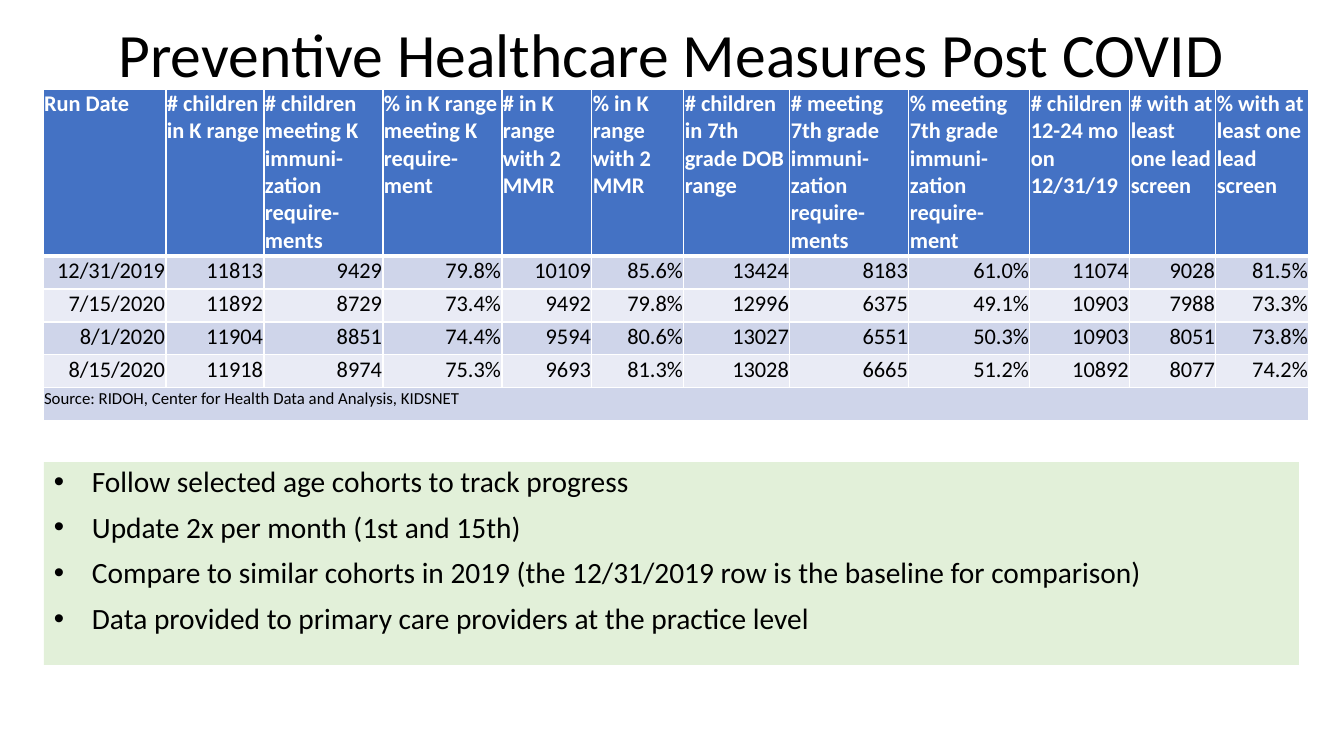
from dataclasses import dataclass

from lxml.etree import SubElement
from pptx import Presentation
from pptx.dml.color import RGBColor as Color
from pptx.enum.shapes import MSO_SHAPE as Preset
from pptx.enum.text import MSO_ANCHOR as Anchor, PP_ALIGN as Align
from pptx.oxml.ns import qn
from pptx.util import Pt

EMU_PER_PX = 914400 / 100.8


@dataclass(frozen=True)
class Theme:
    font: str = "Calibri"
    black: str = "000000"
    white: str = "FFFFFF"
    header_fill: str = "4472C4"
    bands: tuple = ("CFD5EA", "E9EBF5")
    panel_fill: str = "E2F0D9"
    title_size: int = 44
    panel_size: int = 21
    table_size: int = 16
    source_size: int = 12


THEME = Theme()

TITLE = "Preventive Healthcare Measures Post COVID"
COLUMNS = [
    ("Run Date", 123),
    ("# children in K range", 98),
    ("# children meeting K immuni-zation require-ments", 119),
    ("% in K range meeting K require-ment", 119),
    ("# in K range with 2 MMR", 90),
    ("% in K range with 2 MMR", 92),
    ("# children in 7th grade DOB range", 106),
    ("# meeting 7th grade immuni-zation require-ments", 119),
    ("% meeting 7th grade immuni-zation require-ment", 121),
    ("# children 12-24 mo on 12/31/19", 100),
    ("# with at least one lead screen", 86),
    ("% with at least one lead screen", 93),
]
RUNS = [
    ("12/31/2019", "11813", "9429", "79.8%", "10109", "85.6%",
     "13424", "8183", "61.0%", "11074", "9028", "81.5%"),
    ("7/15/2020", "11892", "8729", "73.4%", "9492", "79.8%",
     "12996", "6375", "49.1%", "10903", "7988", "73.3%"),
    ("8/1/2020", "11904", "8851", "74.4%", "9594", "80.6%",
     "13027", "6551", "50.3%", "10903", "8051", "73.8%"),
    ("8/15/2020", "11918", "8974", "75.3%", "9693", "81.3%",
     "13028", "6665", "51.2%", "10892", "8077", "74.2%"),
]
SOURCE = "Source: RIDOH, Center for Health Data and Analysis, KIDSNET"
POINTS = [
    "Follow selected age cohorts to track progress",
    "Update 2x per month (1st and 15th)",
    "Compare to similar cohorts in 2019 (the 12/31/2019 row is the baseline for comparison)",
    "Data provided to primary care providers at the practice level",
]
HEADER_HEIGHT, RUN_HEIGHT, SOURCE_HEIGHT = 156, 31, 33


def px(length):
    return round(length * EMU_PER_PX)


def box(*lengths):
    return [px(length) for length in lengths]


def style_paragraph(paragraph, size, color=THEME.black, bold=False, align=Align.LEFT):
    paragraph.alignment = align
    for run in paragraph.runs:
        run.font.name = THEME.font
        run.font.size = Pt(size)
        run.font.bold = bold
        run.font.color.rgb = Color.from_string(color)


def fill_solid(target, color):
    target.fill.solid()
    target.fill.fore_color.rgb = Color.from_string(color)


def add_bullet(paragraph, indent):
    """Put a hanging bullet before the paragraph."""
    properties = paragraph._p.get_or_add_pPr()
    properties.set("marL", str(px(indent)))
    properties.set("indent", str(-px(indent)))
    SubElement(properties, qn("a:buFont"), typeface="Arial")
    SubElement(properties, qn("a:buChar"), char="•")


def add_borders(cell, top=1, bottom=1):
    """Draw white cell edges, with widths in points."""
    properties = cell._tc.get_or_add_tcPr()
    for side, width in (("L", 1), ("R", 1), ("T", top), ("B", bottom)):
        line = SubElement(properties, qn(f"a:ln{side}"), w=str(Pt(width)))
        solid = SubElement(line, qn("a:solidFill"))
        SubElement(solid, qn("a:srgbClr"), val=THEME.white)


def write_cell(cell, text, fill, borders=None, size=THEME.table_size, **style):
    cell.margin_left = cell.margin_right = cell.margin_top = px(1)
    cell.margin_bottom = px(5)
    add_borders(cell, **(borders or {}))
    fill_solid(cell, fill)
    cell.text_frame.text = text
    style_paragraph(cell.text_frame.paragraphs[0], size, **style)


def add_title(slide):
    text_frame = slide.shapes.add_textbox(*box(33, 19, 1277, 78)).text_frame
    text_frame.word_wrap = True
    text_frame.vertical_anchor = Anchor.MIDDLE
    text_frame.text = TITLE
    paragraph = text_frame.paragraphs[0]
    paragraph.line_spacing = 0.9
    style_paragraph(paragraph, THEME.title_size, align=Align.CENTER)


def add_measures_table(slide):
    heights = [HEADER_HEIGHT] + [RUN_HEIGHT] * len(RUNS) + [SOURCE_HEIGHT]
    width = sum(column_width for _, column_width in COLUMNS)
    table = slide.shapes.add_table(
        len(heights), len(COLUMNS), *box(43, 89, width, sum(heights))).table
    for row, height in zip(table.rows, heights):
        row.height = px(height)
    for index, (heading, column_width) in enumerate(COLUMNS):
        table.columns[index].width = px(column_width)
        write_cell(table.cell(0, index), heading, THEME.header_fill,
                   {"bottom": 3}, color=THEME.white, bold=True)
    for row_index, values in enumerate(RUNS, start=1):
        band = THEME.bands[(row_index - 1) % 2]
        borders = {"top": 3 if row_index == 1 else 1}
        for index, value in enumerate(values):
            write_cell(table.cell(row_index, index), value, band, borders,
                       align=Align.RIGHT)
    last_row = len(heights) - 1
    source_cell = table.cell(last_row, 0)
    source_cell.merge(table.cell(last_row, len(COLUMNS) - 1))
    write_cell(source_cell, SOURCE, THEME.bands[0], size=THEME.source_size)


def add_points_panel(slide):
    shape = slide.shapes.add_shape(Preset.RECTANGLE, *box(44, 462, 1255, 203))
    shape.shadow.inherit = False
    shape.line.fill.background()
    fill_solid(shape, THEME.panel_fill)
    text_frame = shape.text_frame
    text_frame.word_wrap = True
    text_frame.vertical_anchor = Anchor.TOP
    text_frame.text = "\n".join(POINTS)
    for paragraph in text_frame.paragraphs:
        paragraph.line_spacing = 0.9
        paragraph.space_before = Pt(10)
        style_paragraph(paragraph, THEME.panel_size)
        add_bullet(paragraph, 38)


def main():
    presentation = Presentation()
    presentation.slide_width, presentation.slide_height = box(1344, 756)
    slide = presentation.slides.add_slide(presentation.slide_layouts[6])
    add_title(slide)
    add_points_panel(slide)
    add_measures_table(slide)
    presentation.save("out.pptx")


if __name__ == "__main__":
    main()
